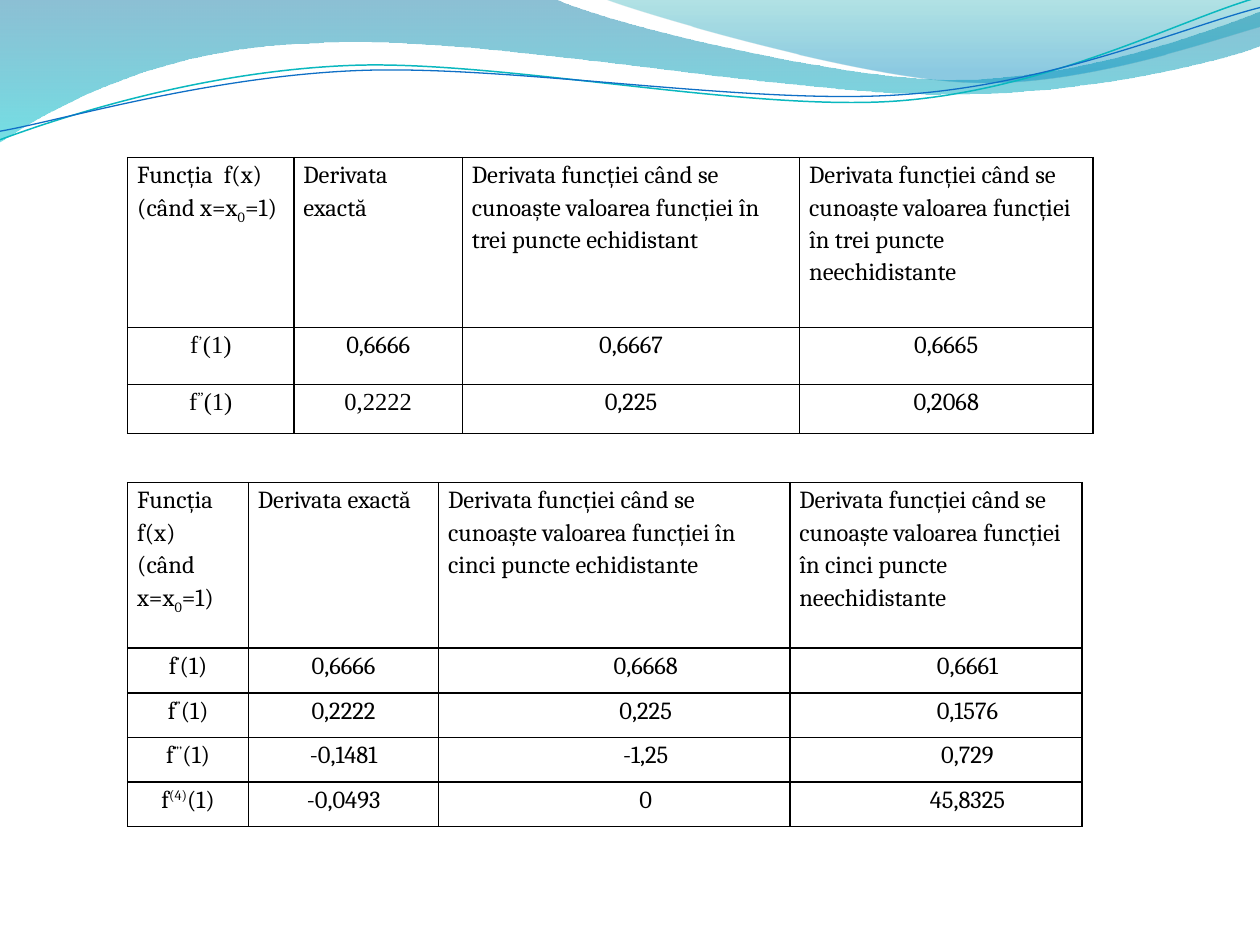
from lxml import etree
from pptx import Presentation
from pptx.dml.color import RGBColor
from pptx.enum.text import PP_ALIGN
from pptx.oxml.ns import qn
from pptx.util import Pt

CENTER = PP_ALIGN.CENTER
LEFT = PP_ALIGN.LEFT
SERIF = "Cambria"
ROMAN = "Times New Roman"
BLACK = "000000"
SUPERSCRIPT, SUBSCRIPT = 30000, -25000
WAVE_LINE_TILT = 357.3
TABLE_LEFT = 73

BROAD_WAVE = [
    [(0, 0)], [(316.8, -0.7)],
    [(342.7, 12.2), (478.1, 45.4), (545.8, 45.4)],
    [(614.2, 45.4), (689.8, 18.7), (720, 6.5)],
    [(720.7, 25.9)],
    [(707.8, 31.7), (626.4, 54.7), (537.1, 54)],
    [(446.4, 54), (275, 20.2), (185, 24.5)],
    [(92.9, 25.9), (33.1, 59.8), (-0.7, 81.4)],
    [(0, 0)],
]
RIGHT_WAVE = [
    [(344.9, -0.7)],
    [(366.5, 7.9), (491, 44.6), (553.7, 46.8)],
    [(616.3, 49.7), (691.9, 23), (720, 15.1)],
    [(720, 0)],
    [(344.9, -0.7)],
]
TEAL_LINE = [
    [(-1.4, 62.9)],
    [(33.8, 51.7), (114.1, 29.4), (199.8, 29.9)],
    [(284.8, 30.3), (425.8, 67.3), (512.4, 64.9)],
    [(599.1, 62.4), (676.4, 25.7), (720.2, 15.6)],
]
BLUE_LINE = [
    [(-1.1, 58)],
    [(32.9, 53.8), (118.3, 32.5), (204.1, 33)],
    [(290.6, 33.4), (428.9, 63.8), (515.5, 61.4)],
    [(601.4, 59.6), (678.4, 30.1), (721.4, 21.3)],
]

FUNCTION_HEADING = "Funcția  f(x)\n(când x=x|0|=1)"
KNOWN_VALUES = "Derivata funcției când se cunoaște valoarea funcției în "
THREE_POINT_ROWS = [
    [FUNCTION_HEADING, "Derivata  exactă",
     KNOWN_VALUES + "trei puncte echidistant", KNOWN_VALUES + "trei puncte neechidistante"],
    ["f|’|(1)", "0,6666", "0,6667", "0,6665"],
    ["f|”|(1)", "0,2222", "0,225", "0,2068"],
]
FIVE_POINT_ROWS = [
    [FUNCTION_HEADING, "Derivata exactă",
     KNOWN_VALUES + "cinci puncte echidistante", KNOWN_VALUES + "cinci puncte neechidistante"],
    ["f|’|(1)", "0,6666", "0,6668", "0,6661"],
    ["f|”|(1)", "0,2222", "0,225", "0,1576"],
    ["f|”’|(1)", "-0,1481", "-1,25", "0,729"],
    ["f|(4)|(1)", "-0,0493", "0", "45,8325"],
]
ROMAN_CELLS = {(1, 0), (2, 0), (2, 1)}


def color(hex_value):
    """Turn a hex string into a colour."""
    return RGBColor.from_string(hex_value)


def bend(outline, segments):
    """Merge each three straight steps of a curve segment into one cubic."""
    steps = iter(list(outline._element.iter(qn("a:lnTo"))))
    for segment in segments[1:]:
        first, *others = [next(steps) for _ in segment]
        if others:
            first.addprevious(curve := etree.Element(qn("a:cubicBezTo")))
            for step in (first, *others):
                curve.append(step[0])
                step.getparent().remove(step)


def add_outline(slide, segments, closed):
    """Add a freeform of line and curve segments."""
    first, *rest = [(Pt(x), Pt(y)) for segment in segments for x, y in segment]
    builder = slide.shapes.build_freeform(*first)
    builder.add_line_segments(rest, close=closed)
    outline = builder.convert_to_shape()
    bend(outline, segments)
    outline.shadow.inherit = False
    return outline


def add_wave(slide, segments, stops):
    """Add a wave with a downward translucent gradient."""
    wave = add_outline(slide, segments, True)
    wave.line.fill.background()
    wave.fill.gradient()
    wave.fill.gradient_angle = 270
    for stop, (position, hex_value, _) in zip(wave.fill.gradient_stops, stops):
        stop.position = position
        stop.color.rgb = color(hex_value)
    shades = wave._element.spPr.iter(qn("a:srgbClr"))
    for shade, (_, _, opacity) in zip(list(shades), stops):
        etree.SubElement(shade, qn("a:alpha"), val=str(opacity * 1000))


def add_wave_line(slide, segments, hex_value, width):
    """Add a thin tilted curve."""
    wave_line = add_outline(slide, segments, False)
    wave_line.rotation = WAVE_LINE_TILT
    wave_line.fill.background()
    wave_line.line.color.rgb = color(hex_value)
    wave_line.line.width = Pt(width)


def set_borders(cell):
    """Draw thin black borders and leave the cell unfilled."""
    properties = cell._tc.get_or_add_tcPr()
    for side in ("a:lnL", "a:lnR", "a:lnT", "a:lnB"):
        border = etree.SubElement(properties, qn(side), w=str(Pt(1)))
        ink = etree.SubElement(border, qn("a:solidFill"))
        etree.SubElement(ink, qn("a:srgbClr"), val=BLACK)
    cell.fill.background()


def write_cell(cell, text, font, is_heading, indent):
    """Write the cell, with pieces between bars raised or lowered."""
    cell.margin_left = cell.margin_right = Pt(5.4)
    cell.margin_top = cell.margin_bottom = 0
    for number, line in enumerate(text.split("\n")):
        frame = cell.text_frame
        paragraph = frame.add_paragraph() if number else frame.paragraphs[0]
        paragraph.alignment = LEFT if is_heading else CENTER
        paragraph.line_spacing = 1.15
        paragraph.font.size = Pt(14)
        paragraph.font.name = font
        paragraph.font.color.rgb = color(BLACK)
        if indent:
            paragraph._p.get_or_add_pPr().set("marL", str(Pt(indent)))
        for index, piece in enumerate(line.split("|")):
            run = paragraph.add_run()
            run.text = piece
            if index % 2:
                baseline = SUBSCRIPT if is_heading else SUPERSCRIPT
                run.font._element.set("baseline", str(baseline))


def add_derivative_table(slide, top, widths, heights, rows, roman_cells=(), indent=0):
    """Add a bordered table comparing derivative values."""
    table = slide.shapes.add_table(len(rows), len(widths), Pt(TABLE_LEFT), Pt(top),
                                   Pt(sum(widths)), Pt(sum(heights))).table
    table.first_row = table.horz_banding = False
    for column, width in zip(table.columns, widths):
        column.width = Pt(width)
    for r, (texts, height) in enumerate(zip(rows, heights)):
        table.rows[r].height = Pt(height)
        for c, text in enumerate(texts):
            cell = table.cell(r, c)
            font = ROMAN if (r, c) in roman_cells else SERIF
            write_cell(cell, text, font, r == 0, indent if r and c > 1 else 0)
            set_borders(cell)


def main():
    """Build the slide and save it."""
    presentation = Presentation()
    presentation.slide_width, presentation.slide_height = Pt(720), Pt(540)
    slide = presentation.slides.add_slide(presentation.slide_layouts[6])
    add_wave(slide, BROAD_WAVE, [(0, "0074A1", 45), (1, "00C6CF", 55)])
    add_wave(slide, RIGHT_WAVE, [(0, "00A1A9", 30), (0.8, "008BBF", 45)])
    add_wave_line(slide, TEAL_LINE, "0AB8BF", 0.85)
    add_wave_line(slide, BLUE_LINE, "0F6FC6", 0.75)
    add_derivative_table(slide, 90, [95, 96.3, 192.7, 167.5], [97.2, 32.4, 28],
                         THREE_POINT_ROWS, ROMAN_CELLS)
    add_derivative_table(slide, 275.8, [69, 108.7, 200.7, 167], [94.6] + [25.5] * 4,
                         FIVE_POINT_ROWS, indent=36)
    presentation.save("out.pptx")


if __name__ == "__main__":
    main()
